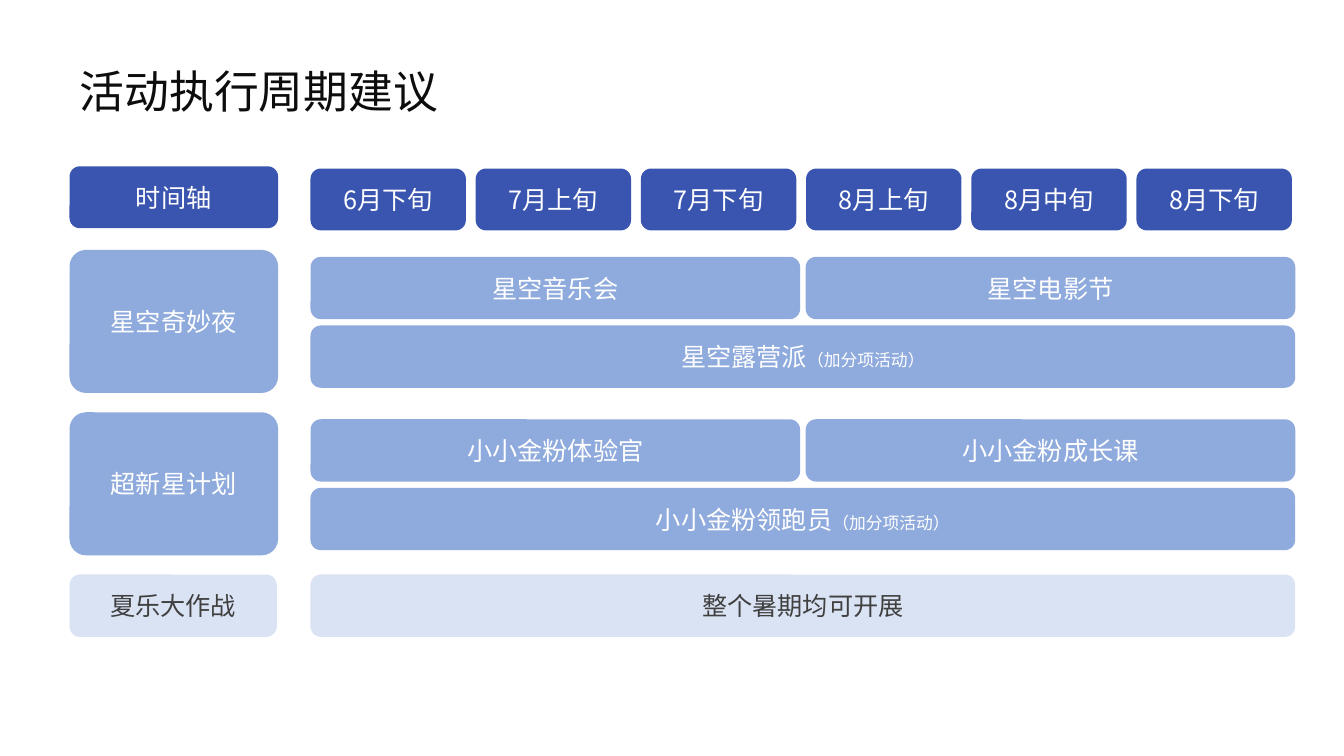
from pptx import Presentation
from pptx.dml.color import RGBColor
from pptx.enum.shapes import MSO_SHAPE as Shape
from pptx.enum.text import MSO_ANCHOR as Anchor, PP_ALIGN as Align
from pptx.oxml.ns import qn
from pptx.util import Pt
from lxml.etree import SubElement

FONT = "Noto Sans CJK JP"
INK = RGBColor(0x0D, 0x0D, 0x0D)
GREY = RGBColor(0x40, 0x40, 0x40)
WHITE = RGBColor(0xFF, 0xFF, 0xFF)
NAVY = RGBColor(0x3A, 0x55, 0xAF)
BLUE = RGBColor(0x8F, 0xAA, 0xDC)
PALE = RGBColor(0xDA, 0xE3, 0xF3)

LABEL_LEFT, LABEL_WIDTH = 49.7, 149
BAR_LEFT, BAR_WIDTH, BAR_HEIGHT = 221.8, 703.4, 44.5
HALF_WIDTH = 349.7
HALF_LEFT = BAR_LEFT + BAR_WIDTH - HALF_WIDTH
MONTH_WIDTH, MONTH_STEP = 111, 118


def add_span(para, text, size, color):
    span = para.add_run()
    span.text = text
    for name, value in {"name": FONT, "size": Pt(size)}.items():
        setattr(span.font, name, value)
    span.font.color.rgb = color
    SubElement(span.font._element, qn("a:ea"), typeface=FONT)


def add_box(left, top, width, height, fill, text, color=WHITE, note=""):
    box = page.shapes.add_shape(
        Shape.ROUNDED_RECTANGLE, Pt(left), Pt(top), Pt(width), Pt(height))
    box.shadow.inherit = False
    box.fill.solid()
    box.fill.fore_color.rgb = fill
    box.line.fill.background()
    box.text_frame.vertical_anchor = Anchor.MIDDLE
    para = box.text_frame.paragraphs[0]
    para.alignment = Align.CENTER
    add_span(para, text, 18, color)
    if note:
        add_span(para, note, 12, color)
    return box


deck = Presentation()
deck.slide_width, deck.slide_height = Pt(960), Pt(540)
page = deck.slides.add_slide(deck.slide_layouts[5])

title = page.shapes.title
title_place = {"left": 49.7, "top": 38.2, "width": 859, "height": 57.6}
for name, value in title_place.items():
    setattr(title, name, Pt(value))
title.text_frame.vertical_anchor = Anchor.MIDDLE
title_para = title.text_frame.paragraphs[0]
title_para.alignment = Align.LEFT
title_para.line_spacing = 0.9
add_span(title_para, "活动执行周期建议", 32, INK)

add_box(LABEL_LEFT, 118.8, LABEL_WIDTH, 44.2, NAVY, "时间轴")
months = ["6月下旬", "7月上旬", "7月下旬", "8月上旬", "8月中旬", "8月下旬"]
for column, month in enumerate(months):
    add_box(BAR_LEFT + column * MONTH_STEP, 120.4, MONTH_WIDTH, 44.2, NAVY, month)

programmes = [
    ("星空奇妙夜", "星空音乐会", "星空电影节", "星空露营派"),
    ("超新星计划", "小小金粉体验官", "小小金粉成长课", "小小金粉领跑员"),
]
for row, (programme, first, second, bonus) in enumerate(programmes):
    top = 178.5 + row * 116
    label = add_box(LABEL_LEFT, top, LABEL_WIDTH, 102.2, BLUE, programme)
    label.adjustments[0] = 0.115
    add_box(BAR_LEFT, top + 5, HALF_WIDTH, BAR_HEIGHT, BLUE, first)
    add_box(HALF_LEFT, top + 5, HALF_WIDTH, BAR_HEIGHT, BLUE, second)
    add_box(BAR_LEFT, top + 54, BAR_WIDTH, BAR_HEIGHT, BLUE, bonus,
            note="（加分项活动）")

add_box(LABEL_LEFT, 410.4, 148, BAR_HEIGHT, PALE, "夏乐大作战", GREY)
add_box(BAR_LEFT, 410.4, BAR_WIDTH, BAR_HEIGHT, PALE, "整个暑期均可开展", GREY)

deck.save("out.pptx")
